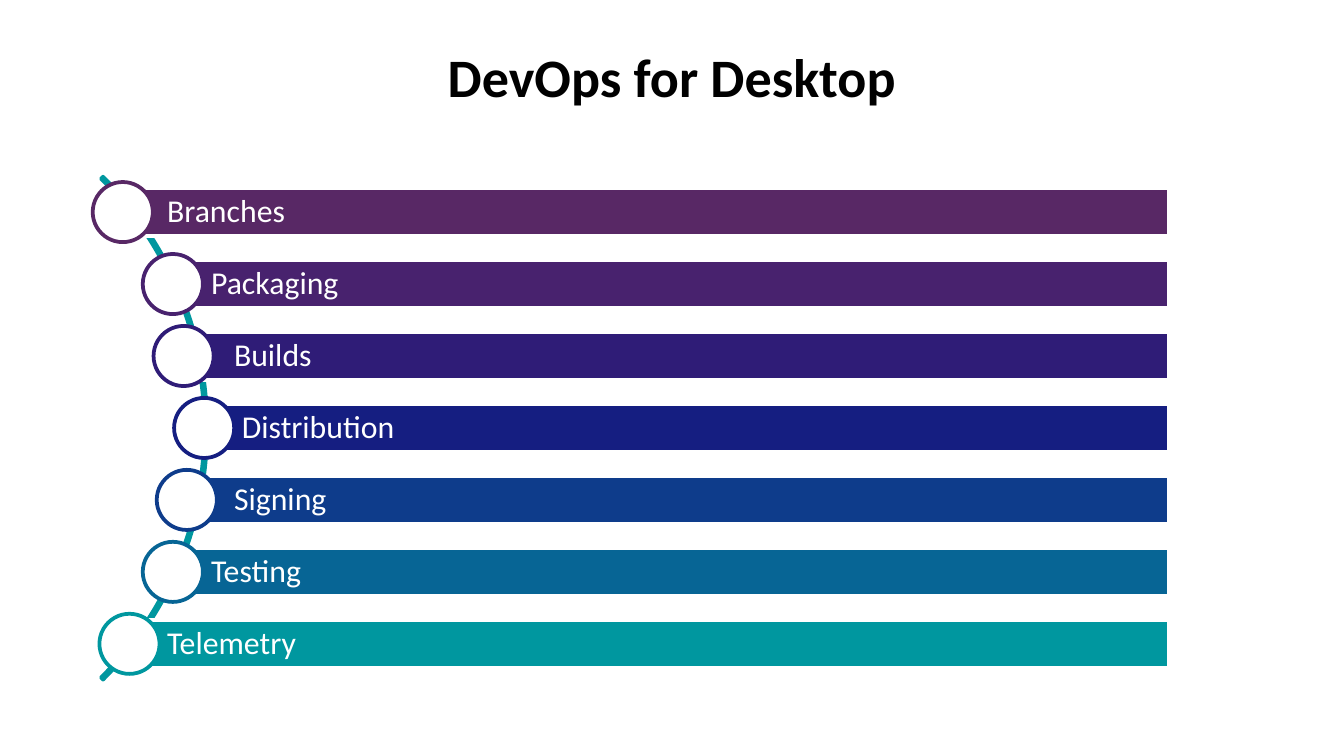
from dataclasses import dataclass

from pptx import Presentation
from pptx.dml import color
from pptx.enum import shapes, text
from pptx.util import Pt


@dataclass(frozen=True)
class Theme:
    font: str = "Calibri"
    title_size: float = 29
    label_size: float = 17
    line_width: float = 2
    ink: str = "000000"
    paper: str = "FFFFFF"
    arc: str = "00979F"
    steps: tuple = ("582865", "48226E", "2F1C77", "151E81", "0E3C8B", "076595", "00979F")


class SlideBuilder:
    def __init__(self, slide, theme):
        self.slide = slide
        self.theme = theme

    def rgb(self, value):
        return color.RGBColor.from_string(value)

    def add_text(self, tf, words, size, ink, align, bold=False):
        tf.vertical_anchor = text.MSO_ANCHOR.MIDDLE
        tf.word_wrap = True
        p = tf.paragraphs[0]
        p.alignment = align
        r = p.add_run()
        r.text = words
        r.font.name = self.theme.font
        r.font.size = Pt(size)
        r.font.bold = bold
        r.font.color.rgb = self.rgb(ink)
        return p

    def title(self, words, left, top, width, height):
        sp = self.slide.shapes.title
        sp.left, sp.top, sp.width, sp.height = map(Pt, (left, top, width, height))
        self.add_text(sp.text_frame, words, self.theme.title_size, self.theme.ink,
                      text.PP_ALIGN.CENTER, bold=True)

    def shape(self, kind, left, top, width, height, line, fill=None):
        sp = self.slide.shapes.add_shape(kind, *map(Pt, (left, top, width, height)))
        sp.shadow.inherit = False
        if fill:
            sp.fill.solid()
            sp.fill.fore_color.rgb = self.rgb(fill)
        else:
            sp.fill.background()
        sp.line.color.rgb = self.rgb(line)
        sp.line.width = Pt(self.theme.line_width)
        return sp

    def arc(self, center_x, center_y, radius):
        sp = self.shape(shapes.MSO_SHAPE.BLOCK_ARC, center_x - radius, center_y - radius,
                        2 * radius, 2 * radius, self.theme.arc)
        for i, value in enumerate((189, 27, 0.004)):
            sp.adjustments[i] = value

    def bar(self, words, left, top, right, height, fill):
        sp = self.shape(shapes.MSO_SHAPE.RECTANGLE, left, top, right - left, height,
                        self.theme.paper, fill)
        tf = sp.text_frame
        tf.margin_left = Pt(20.4)
        tf.margin_top = tf.margin_right = tf.margin_bottom = Pt(3.4)
        p = self.add_text(tf, words, self.theme.label_size, self.theme.paper,
                          text.PP_ALIGN.LEFT)
        p.line_spacing = 0.9

    def circle(self, left, center_y, diameter, line):
        self.shape(shapes.MSO_SHAPE.OVAL, left, center_y - diameter / 2,
                   diameter, diameter, line, self.theme.paper)


STEPS = [
    ("Branches", 69.1, 49.7),
    ("Packaging", 92.7, 76.5),
    ("Builds", 105, 82.3),
    ("Distribution", 109.2, 93.3),
    ("Signing", 105, 84),
    ("Testing", 92.7, 76.5),
    ("Telemetry", 69.1, 53.3),
]
FIRST_TOP, PITCH, BAR_HEIGHT, BAR_RIGHT = 100.8, 38.55, 25.7, 626.4
CIRCLE_SIZE = 32.2


def main():
    prs = Presentation()
    prs.slide_width, prs.slide_height = Pt(720), Pt(405)
    theme = Theme()
    s = SlideBuilder(prs.slides.add_slide(prs.slide_layouts[5]), theme)
    s.title("DevOps for Desktop", 36, 18, 648, 45)
    s.arc(-79.5, 229.4, 190.5)
    for i, (words, bar_left, circle_left) in enumerate(STEPS):
        top = FIRST_TOP + i * PITCH
        s.bar(words, bar_left, top, BAR_RIGHT, BAR_HEIGHT, theme.steps[i])
        s.circle(circle_left, top + BAR_HEIGHT / 2, CIRCLE_SIZE, theme.steps[i])
    prs.save("out.pptx")


if __name__ == "__main__":
    main()
